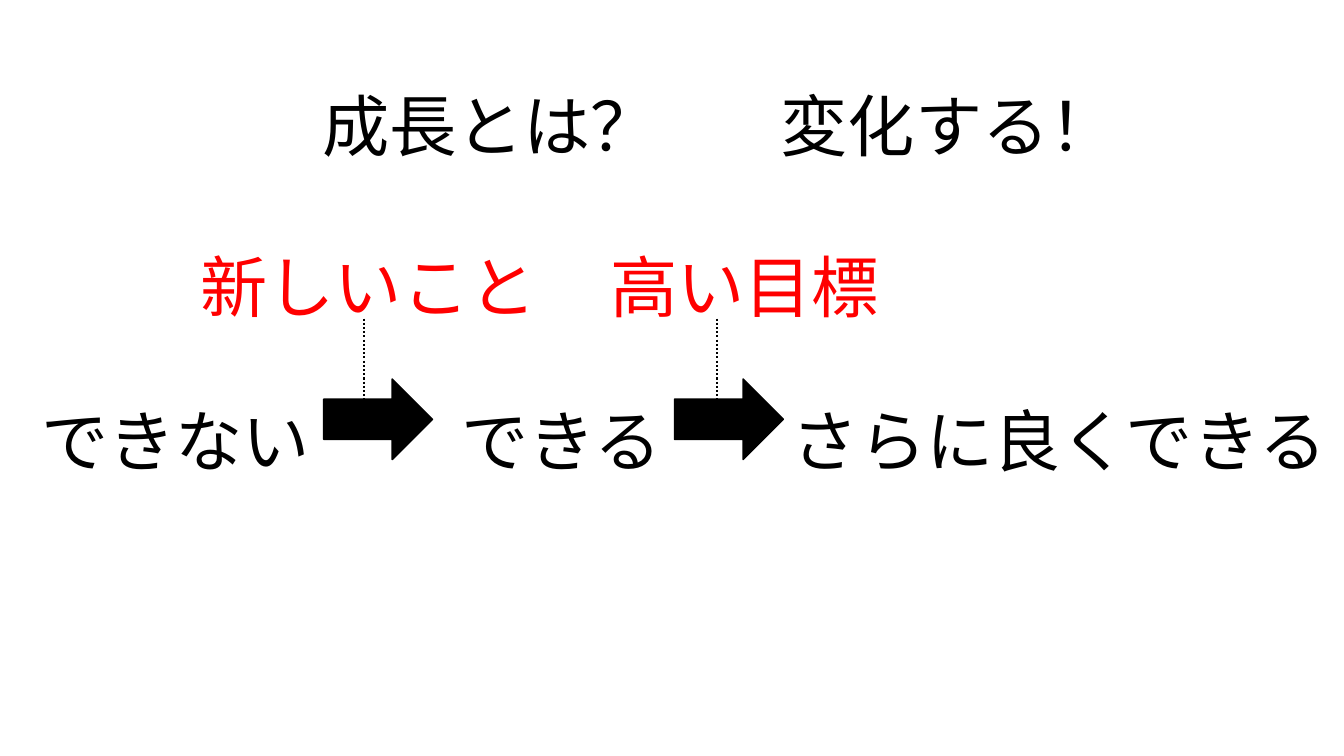
"""Build a slide showing growth as a chain of changes."""
from lxml import etree
from pptx import Presentation
from pptx import util as u
from pptx.dml.color import RGBColor
from pptx.enum import dml, shapes, text
from pptx.oxml.ns import qn

FONT = "Noto Sans CJK JP"
BLACK, RED = "000000", "FF0000"
LABEL_HEIGHT = 1.45
INSET, HEADING_INDENT = 0.1, 1.43

ROWS = [
    {"top": 0.31, "color": BLACK, "spacing": 1.5, "inset": HEADING_INDENT,
     "labels": [("成長とは？", -0.65, 9.69), ("変化する！", 5.38, 6.73)]},
    {"top": 3.44, "color": BLACK, "spacing": 1.5, "inset": INSET,
     "labels": [("できない", 0, 3.48), ("できる", 3.42, 4.3),
                ("さらに良くできる", 7.67, 5.67)]},
    {"top": 2.11, "color": RED, "spacing": 1.0, "inset": INSET,
     "labels": [("新しいこと", 0.29, 6.73), ("高い目標", 4.02, 6.73)]},
]
ARROW_LEFTS = [3.21, 6.69]
ARROW_TOP, ARROW_WIDTH, ARROW_HEIGHT = 3.76, 1.08, 0.8
GUIDE_XS = [3.61, 7.11]
GUIDE_TOP, GUIDE_BOTTOM = 3.16, 4.22


def paint(color_format, color):
    color_format.rgb = RGBColor.from_string(color)


def add_label(slide, wording, left, width, row):
    shape = slide.shapes.add_textbox(
        u.Inches(left), u.Inches(row["top"]), u.Inches(width), u.Inches(LABEL_HEIGHT))
    frame = shape.text_frame
    frame.word_wrap = True
    frame.vertical_anchor = text.MSO_ANCHOR.MIDDLE
    frame.margin_left = u.Inches(row["inset"])
    paragraph = frame.paragraphs[0]
    paragraph.alignment = text.PP_ALIGN.CENTER
    paragraph.line_spacing = row["spacing"]
    run = paragraph.add_run()
    run.text = wording
    run.font.size = u.Pt(48)
    run.font.name = FONT
    paint(run.font.color, row["color"])
    etree.SubElement(run.font._element, qn("a:ea"), typeface=FONT)


def add_arrow(slide, left):
    arrow = slide.shapes.add_shape(
        shapes.MSO_SHAPE.RIGHT_ARROW, u.Inches(left), u.Inches(ARROW_TOP),
        u.Inches(ARROW_WIDTH), u.Inches(ARROW_HEIGHT))
    arrow.shadow.inherit = False
    arrow.fill.solid()
    paint(arrow.fill.fore_color, BLACK)
    paint(arrow.line.color, BLACK)
    arrow.line.width = u.Pt(1)


def add_guide(slide, x):
    guide = slide.shapes.add_connector(
        shapes.MSO_CONNECTOR.STRAIGHT, u.Inches(x), u.Inches(GUIDE_TOP),
        u.Inches(x), u.Inches(GUIDE_BOTTOM))
    paint(guide.line.color, BLACK)
    guide.line.width = u.Pt(1.5)
    guide.line.dash_style = dml.MSO_LINE.ROUND_DOT
    etree.SubElement(guide._element.spPr, qn("a:effectLst"))


def main():
    presentation = Presentation()
    presentation.slide_width = u.Inches(13.33)
    presentation.slide_height = u.Inches(7.5)
    slide = presentation.slides.add_slide(presentation.slide_layouts[6])
    for row in ROWS:
        for wording, left, width in row["labels"]:
            add_label(slide, wording, left, width, row)
    for left in ARROW_LEFTS:
        add_arrow(slide, left)
    for x in GUIDE_XS:
        add_guide(slide, x)
    presentation.save("out.pptx")


if __name__ == "__main__":
    main()
